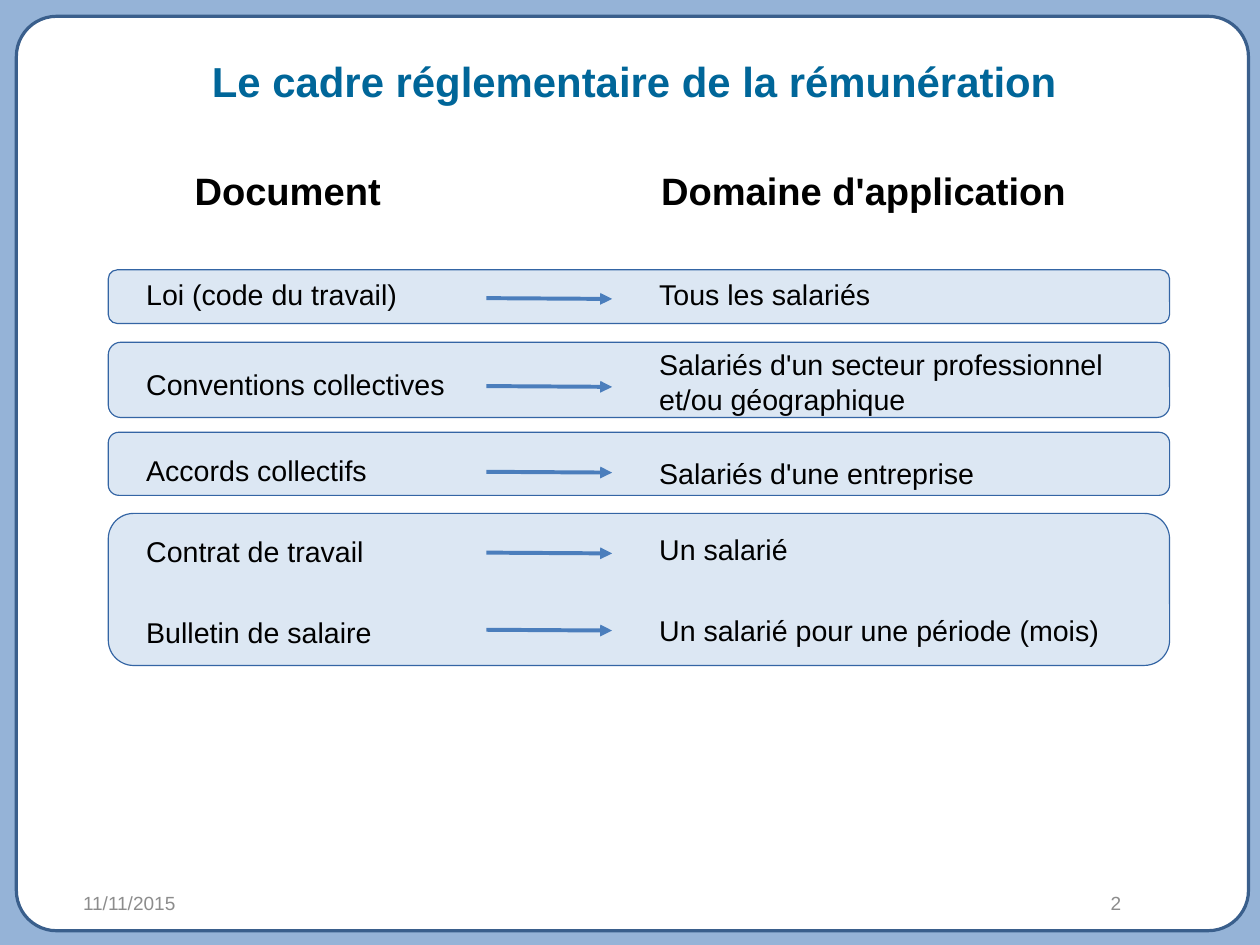
"""Build the slide on the rules that govern pay."""
from dataclasses import dataclass
from lxml.etree import SubElement
from pptx import Presentation
from pptx.dml.color import RGBColor
from pptx.enum.shapes import MSO_CONNECTOR, MSO_SHAPE
from pptx.enum.text import MSO_ANCHOR, MSO_AUTO_SIZE, PP_ALIGN
from pptx.oxml.ns import qn
from pptx.util import Pt

TITLE = "Le cadre réglementaire de la rémunération"
HEADS = [("Document", 67.8, 226.8), ("Domaine d'application", 385.2, 317.5)]
ROWS = [
    ("Loi (code du travail)", 171, "Tous les salariés", 171, 187.8),
    ("Conventions collectives", 227.6,
     "Salariés d'un secteur professionnel et/ou géographique", 215.3, 243.2),
    ("Accords collectifs", 281.6, "Salariés d'une entreprise", 283.6, 297.2),
    ("Contrat de travail", 332.6, "Un salarié", 331.4, 348.1),
    ("Bulletin de salaire", 383.7, "Un salarié pour une période (mois)", 382.5, 396.7),
]
BANDS = [(170, 33.8), (215.6, 47.4), (272.3, 39.7), (323.4, 95.8)]
FOOT = [("11/11/2015", 45.2, PP_ALIGN.LEFT), ("2", 524.9, PP_ALIGN.RIGHT)]


@dataclass
class Theme:
    """Colours, font and type sizes."""
    font: str = "Arial"
    back: str = "95B3D7"
    page: str = "FFFFFF"
    edge: str = "3A5F8C"
    band: str = "DCE7F3"
    rim: str = "3465A4"
    arrow: str = "4B7EBC"
    blue: str = "006699"
    ink: str = "000000"
    grey: str = "8C8C8C"
    title: float = 26.4
    head: float = 24
    body: float = 18
    foot: float = 12


THEME = Theme()


def rgb(code):
    """Turn a hex code into a colour."""
    return RGBColor.from_string(code)


def style(shape, text, size, color, bold=False, align=PP_ALIGN.LEFT, anchor=MSO_ANCHOR.TOP):
    """Set the text of a shape and format it."""
    frame = shape.text_frame
    frame.text = text
    frame.word_wrap = True
    frame.auto_size = MSO_AUTO_SIZE.NONE
    frame.vertical_anchor = anchor
    para = frame.paragraphs[0]
    para.alignment = align
    font = para.runs[0].font
    font.name, font.size, font.bold = THEME.font, Pt(size), bold
    font.color.rgb = rgb(color)


def label(slide, box, *args, **opts):
    """Add a text box."""
    style(slide.shapes.add_textbox(*map(Pt, box)), *args, **opts)


def panel(slide, box, round_by, fill, line, width):
    """Add a rounded rectangle."""
    shape = slide.shapes.add_shape(MSO_SHAPE.ROUNDED_RECTANGLE, *map(Pt, box))
    shape.adjustments[0] = round_by
    shape.shadow.inherit = False
    shape.fill.solid()
    shape.fill.fore_color.rgb = rgb(fill)
    shape.line.color.rgb = rgb(line)
    shape.line.width = Pt(width)
    return shape


def arrow(slide, left, top, right, low):
    """Add an arrow that points right."""
    link = slide.shapes.add_connector(
        MSO_CONNECTOR.STRAIGHT, Pt(left), Pt(top), Pt(right), Pt(low))
    link.line.color.rgb = rgb(THEME.arrow)
    link.line.width = Pt(2.5)
    props = link.element.spPr
    SubElement(props.find(qn("a:ln")), qn("a:tailEnd"), type="triangle")
    SubElement(props, qn("a:effectLst"))


def main():
    """Lay out the slide and save it."""
    deck = Presentation()
    deck.slide_width, deck.slide_height = Pt(793.75), Pt(595.25)
    slide = deck.slides.add_slide(deck.slide_layouts[5])
    slide.background.fill.solid()
    slide.background.fill.fore_color.rgb = rgb(THEME.back)

    title = slide.shapes.title
    title.left, title.top, title.width, title.height = map(Pt, (62.5, 31.3, 674.6, 38.2))
    style(title, TITLE, THEME.title, THEME.blue, bold=True, align=PP_ALIGN.CENTER)
    page = panel(slide, (10.3, 10.3, 776.2, 576), 0.044, THEME.page, THEME.edge, 2)
    title.element.addprevious(page.element)

    for text, left, align in FOOT:
        label(slide, (left, 553, 188.6, 31.7), text, THEME.foot, THEME.grey,
              align=align, anchor=MSO_ANCHOR.MIDDLE)
    for top, high in BANDS:
        panel(slide, (68.2, top, 668.6, high), 0.167, THEME.band, THEME.rim, 0.75)
    for text, left, wide in HEADS:
        label(slide, (left, 101.9, wide, 36), text, THEME.head, THEME.ink,
              bold=True, align=PP_ALIGN.CENTER)
    for name, top, scope, level, mid in ROWS:
        label(slide, (85, top, 221, 27.4), name, THEME.body, THEME.ink)
        label(slide, (408.2, level, 311.8, 34), scope, THEME.body, THEME.ink)
        arrow(slide, 306.4, mid, 385.6, mid + 0.5)
    deck.save("out.pptx")


if __name__ == "__main__":
    main()
